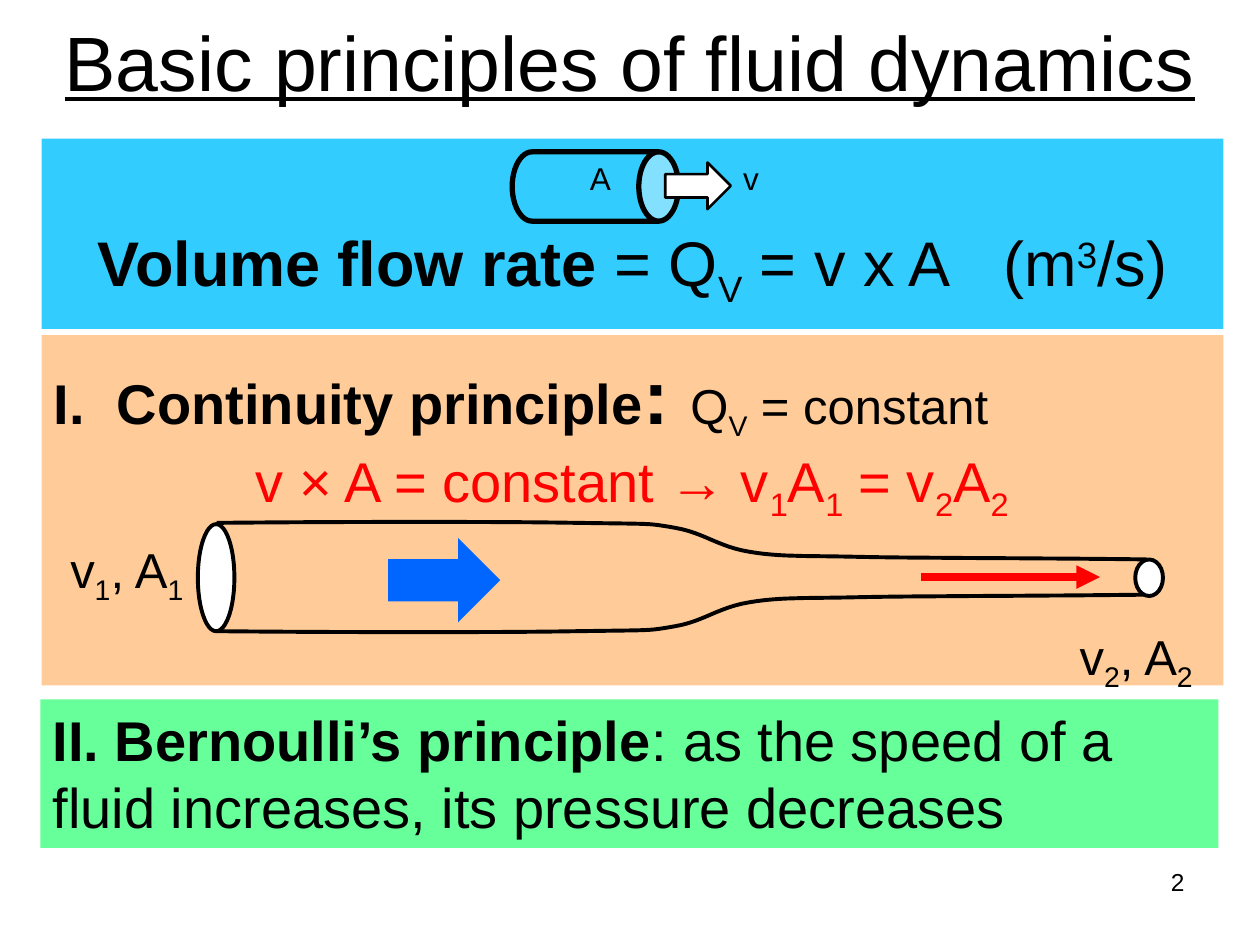
from lxml.etree import SubElement
from pptx import Presentation
from pptx.dml.color import RGBColor
from pptx.enum.shapes import MSO_CONNECTOR as Connector, MSO_SHAPE as Shape
from pptx.enum.text import MSO_ANCHOR as Anchor, PP_ALIGN as Align
from pptx.oxml.ns import qn
from pptx.util import Inches, Pt

BLACK = RGBColor(0x00, 0x00, 0x00)
WHITE = RGBColor(0xFF, 0xFF, 0xFF)
SKY = RGBColor(0x33, 0xCC, 0xFF)
PEACH = RGBColor(0xFF, 0xCC, 0x99)
MINT = RGBColor(0x66, 0xFF, 0x99)
BLUE = RGBColor(0x00, 0x66, 0xFF)
RED = RGBColor(0xFF, 0x00, 0x00)

COLUMNS, ROWS = 100, 75
CELL = Inches(0.1)
SUB, SUPER = {"baseline": -25}, {"baseline": 30}
BOLD = {"bold": True}

TITLE = [("Basic principles of fluid dynamics", {"underline": True})]
FLOW_RATE = [
    ("Volume flow rate", BOLD), (" = Q", {}), ("V", SUB), (" = v x A", {}),
    (" ", {"spacing": 20}), ("(m", {}), ("3", SUPER), ("/s)", {}),
]
CONTINUITY = [
    ("Continuity principle", BOLD), (": ", {"bold": True, "size": 44}),
    ("Q", {"size": 28}), ("V", {"size": 28, **SUB}), (" = constant", {"size": 28}),
]
EQUATION = [
    ("v × A = constant → v", {}), ("1", SUB), ("A", {}), ("1", SUB),
    (" = v", {}), ("2", SUB), ("A", {}), ("2", SUB),
]
BERNOULLI = [
    ("II. Bernoulli’s principle", BOLD),
    (": as the speed of a fluid increases, its pressure decreases", {}),
]
TUBE_LABELS = [("A", (45.7, 12.1, 3.9, 4.6)), ("v", (57.9, 12.1, 3.4, 4.6))]
PIPE_LABELS = [("1", (4.6, 42.3, 11.6, 5.7)), ("2", (84.7, 49.2, 11.6, 5.7))]
PIPE_ENDS = [(15.7, 41.6, 2.9, 8.5), (90.1, 44.4, 2.2, 2.9)]

PIPE_AXIS = 45.8
PIPE_START = (17.2, 41.5)
PIPE_CURVES = [
    ((28.3, 41.4), (39.8, 41.4), (45.8, 41.5)),
    ((51.9, 41.6), (51.3, 41.5), (53.6, 41.9)),
    ((55.9, 42.3), (57.0, 43.4), (59.5, 43.8)),
    ((61.9, 44.2), (63.6, 44.1), (68.3, 44.2)),
    ((72.9, 44.3), (83.5, 44.3), (91.0, 44.4)),
]
CURVE_STEPS = 12


def cells(*values):
    return [round(value * CELL) for value in values]


def add_block(slide, kind, box, fill=None, line=None, width=2.25):
    shape = slide.shapes.add_shape(kind, *cells(*box))
    shape.shadow.inherit = False
    if fill is None:
        shape.fill.background()
    else:
        shape.fill.solid()
        shape.fill.fore_color.rgb = fill
    if line is None:
        shape.line.fill.background()
    else:
        shape.line.color.rgb = line
        shape.line.width = Pt(width)
    return shape


def add_label(slide, box):
    return slide.shapes.add_textbox(*cells(*box))


def write(shape, runs, size=18, color=BLACK, align=Align.LEFT, anchor=Anchor.TOP,
          wrap=True, top=0.05, bottom=0.05, before=0, left=0, hanging=0,
          numbering=None, append=False):
    frame = shape.text_frame
    frame.word_wrap = wrap
    frame.vertical_anchor = anchor
    frame.margin_top, frame.margin_bottom = Inches(top), Inches(bottom)
    paragraph = frame.add_paragraph() if append else frame.paragraphs[0]
    paragraph.alignment = align
    paragraph.space_before = Pt(before)
    properties = paragraph._p.get_or_add_pPr()
    properties.set("marL", str(Inches(left)))
    properties.set("indent", str(-Inches(hanging)))
    if numbering:
        SubElement(properties, qn("a:buFont"), typeface="+mj-lt")
        SubElement(properties, qn("a:buAutoNum"), type=numbering)
    for text, style in runs:
        run = paragraph.add_run()
        run.text = text
        font = run.font
        font.name = "Arial"
        font.size = Pt(style.get("size", size))
        font.bold = style.get("bold", False)
        font.underline = style.get("underline", False)
        font.color.rgb = color
        attributes = run._r.get_or_add_rPr()
        if "baseline" in style:
            attributes.set("baseline", str(style["baseline"] * 1000))
        if "spacing" in style:
            attributes.set("spc", str(style["spacing"] * 100))


def wall_points():
    points, start = [PIPE_START], PIPE_START
    for first, second, end in PIPE_CURVES:
        for step in range(1, CURVE_STEPS + 1):
            t = step / CURVE_STEPS
            u = 1 - t
            points.append(tuple(
                u**3 * a + 3 * u * u * t * b + 3 * u * t * t * c + t**3 * d
                for a, b, c, d in zip(start, first, second, end)))
        start = end
    return points


def add_wall(slide, points):
    corners = [tuple(cells(*point)) for point in points]
    builder = slide.shapes.build_freeform(*corners[0])
    builder.add_line_segments(corners[1:], close=False)
    wall = builder.convert_to_shape()
    wall.shadow.inherit = False
    wall.fill.background()
    wall.line.color.rgb = BLACK
    wall.line.width = Pt(2.25)


def add_arrow(slide, start, end, color, width):
    arrow = slide.shapes.add_connector(Connector.STRAIGHT, *cells(*start, *end))
    arrow.line.color.rgb = color
    arrow.line.width = Pt(width)
    SubElement(arrow.line._get_or_add_ln(), qn("a:tailEnd"), type="triangle")
    SubElement(arrow._element.spPr, qn("a:effectLst"))


def add_flow_rate(slide):
    panel = add_block(slide, Shape.RECTANGLE, (3.3, 11, 93.8, 15.1), SKY)
    write(panel, FLOW_RATE, size=36, align=Align.CENTER, anchor=Anchor.BOTTOM, bottom=0.15)
    tube = add_block(slide, Shape.CAN, (44.5, 8.2, 5.5, 13.2), SKY, BLACK, 3)
    tube.rotation = 90
    tube.adjustments[0] = 0.574
    add_block(slide, Shape.RIGHT_ARROW, (52.8, 12.9, 5.2, 3.7), WHITE, BLACK, 1.5)
    for text, box in TUBE_LABELS:
        write(add_label(slide, box), [(text, {})], align=Align.CENTER, wrap=False)


def add_continuity(slide):
    panel = add_block(slide, Shape.RECTANGLE, (3.3, 26.6, 93.8, 27.8), PEACH)
    write(panel, CONTINUITY, size=32, left=0.5, hanging=0.5, numbering="romanUcPeriod")
    write(panel, EQUATION, size=32, color=RED, left=1.6, before=2, top=0.1, append=True)
    for index, box in PIPE_LABELS:
        runs = [("v", {}), (index, SUB), (", A", {}), (index, SUB)]
        write(add_label(slide, box), runs, size=28, wrap=False)
    add_block(slide, Shape.RIGHT_ARROW, (30.8, 42.7, 8.9, 6.7), BLUE)
    upper = wall_points()
    add_wall(slide, upper)
    add_wall(slide, [(x, 2 * PIPE_AXIS - y) for x, y in upper])
    for box in PIPE_ENDS:
        add_block(slide, Shape.OVAL, box, WHITE, BLACK)
    add_arrow(slide, (73.1, PIPE_AXIS), (87.3, PIPE_AXIS), RED, 4.5)


def main():
    presentation = Presentation()
    presentation.slide_width, presentation.slide_height = cells(COLUMNS, ROWS)
    slide = presentation.slides.add_slide(presentation.slide_layouts[6])
    title = add_block(slide, Shape.RECTANGLE, (0, 0, COLUMNS, 9.6), WHITE)
    write(title, TITLE, size=44, align=Align.CENTER, anchor=Anchor.MIDDLE)
    add_flow_rate(slide)
    add_continuity(slide)
    bernoulli = add_block(slide, Shape.RECTANGLE, (3.2, 55.5, 93.5, 11.8), MINT)
    write(bernoulli, BERNOULLI, size=32)
    number = add_label(slide, (71.7, 68.3, 23.3, 5.2))
    write(number, [("2", {})], size=14, align=Align.RIGHT)
    presentation.save("out.pptx")


if __name__ == "__main__":
    main()
